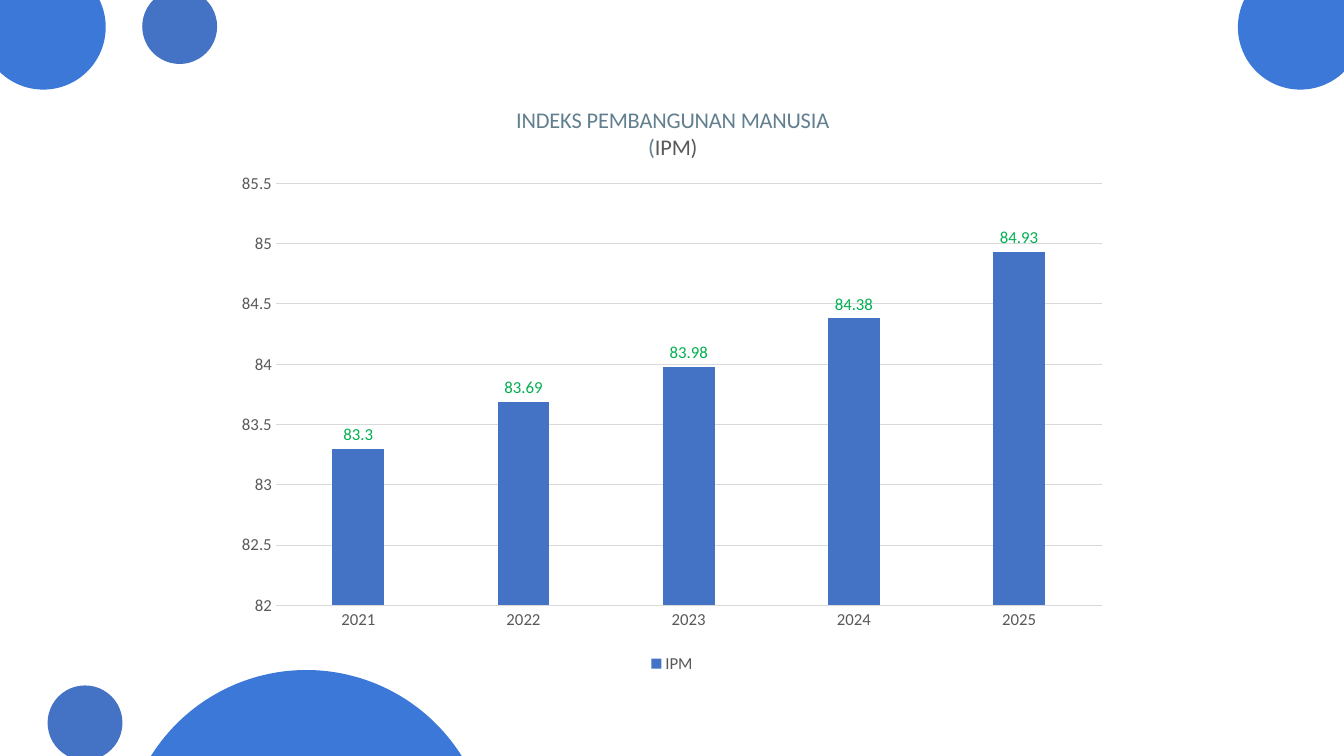
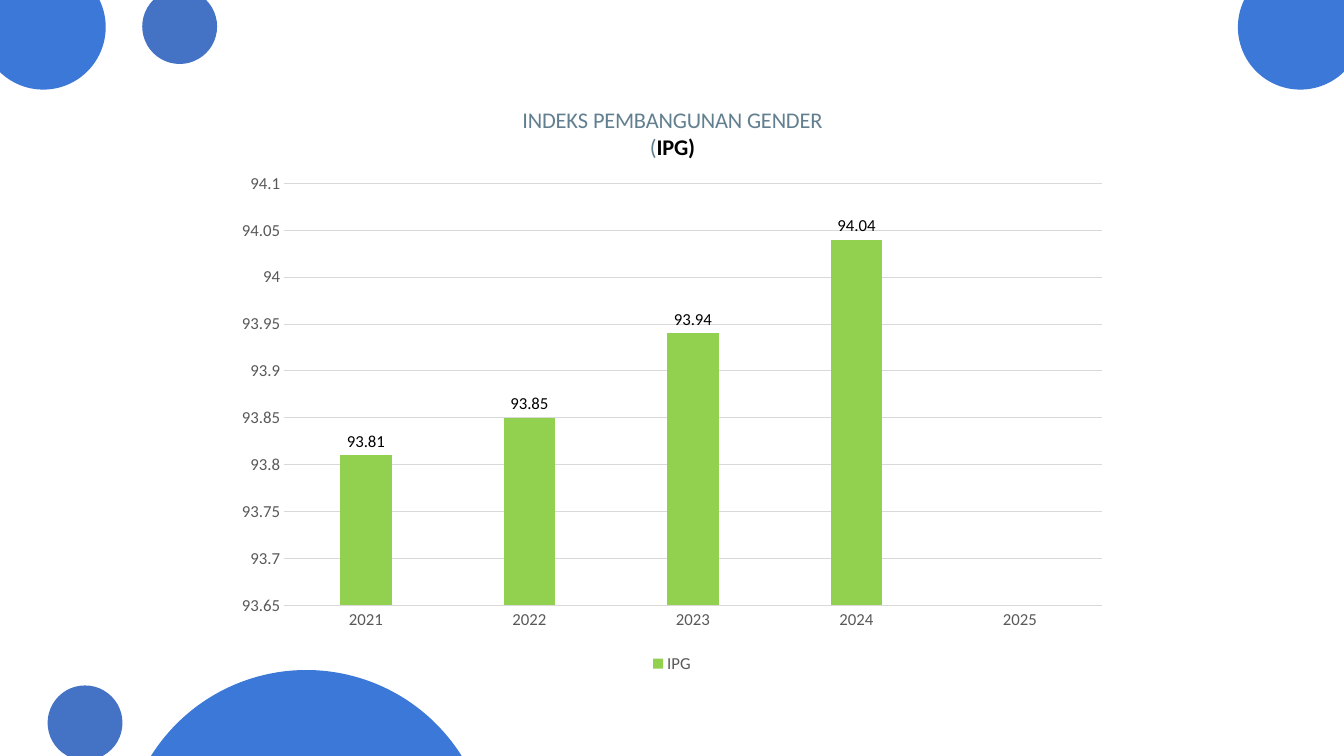
"""Build two slides that chart a development index inside a shared frame of circles."""
from dataclasses import dataclass

from pptx import Presentation
from pptx.chart.axis import CategoryAxis, ValueAxis
from pptx.chart.chart import Chart
from pptx.chart.data import CategoryChartData
from pptx.dml.color import RGBColor
from pptx.dml.fill import FillFormat
from pptx.enum.chart import XL_CHART_TYPE, XL_LABEL_POSITION, XL_LEGEND_POSITION, XL_TICK_MARK
from pptx.enum.shapes import MSO_SHAPE
from pptx.enum.text import PP_ALIGN
from pptx.oxml import parse_xml
from pptx.oxml.ns import nsdecls, qn
from pptx.slide import Slide, SlideLayout
from pptx.text.text import Font
from pptx.util import Pt

OVAL = MSO_SHAPE.OVAL
CENTER = PP_ALIGN.CENTER
COLUMNS = XL_CHART_TYPE.COLUMN_CLUSTERED
OUTSIDE_END = XL_LABEL_POSITION.OUTSIDE_END
BOTTOM = XL_LEGEND_POSITION.BOTTOM
NO_TICK = XL_TICK_MARK.NONE

FONT = "Calibri"
BRIGHT_BLUE, BLUE, GREEN = "3C78D8", "4472C4", "92D050"
TITLE_COLOR, GRAY, GRID, BLACK, LABEL_GREEN = "617F8F", "595959", "D9D9D9", "000000", "00B050"
YEARS = ("2021", "2022", "2023", "2024", "2025")
BLANK_LAYOUT = 6
CHART_LEFT, CHART_TOP, CHART_WIDTH, CHART_HEIGHT = 160, 57, 640, 427
PLOT_TOP, PLOT_BOTTOM, PLOT_RIGHT = 131, 432.5, 787
TITLE_TOP = 73


@dataclass(frozen=True)
class Circle:
    """A decorative circle, measured in points."""
    left: float
    top: float
    diameter: float
    color: str


@dataclass(frozen=True)
class IndexChart:
    """The content and colours of one index chart."""
    title: str
    name: str
    values: tuple[float | None, ...]
    low: float
    high: float
    step: float
    bar_color: str
    label_color: str
    name_color: str
    name_bold: bool
    title_left: float
    plot_left: float


CIRCLES = (
    Circle(-13.7, -25.2, 89.2, BRIGHT_BLUE),
    Circle(87.8, 478.6, 262, BRIGHT_BLUE),
    Circle(34, 489.6, 53.5, BLUE),
    Circle(884.2, -25.2, 89.2, BRIGHT_BLUE),
    Circle(101.6, -7.8, 53.5, BLUE),
)
CHARTS = (
    IndexChart("INDEKS PEMBANGUNAN MANUSIA", "IPM", (83.3, 83.69, 83.98, 84.38, 84.93),
               82, 85.5, 0.5, BLUE, LABEL_GREEN, GRAY, False, 366.5, 197),
    IndexChart("INDEKS PEMBANGUNAN GENDER", "IPG", (93.81, 93.85, 93.94, 94.04, None),
               93.65, 94.1, 0.05, GREEN, BLACK, BLACK, True, 371, 203),
)


def paint(fill: FillFormat, color: str) -> None:
    """Fill with one solid colour."""
    fill.solid()
    fill.fore_color.rgb = RGBColor.from_string(color)


def style_font(font: Font, *, size: float = 12, color: str = GRAY, bold: bool = False) -> None:
    """Set the typeface, size, colour and weight of a font."""
    font.name, font.size, font.bold = FONT, Pt(size), bold
    paint(font.fill, color)


def add_span(para, text: str, **style) -> None:
    """Add a formatted run to a paragraph."""
    span = para.add_run()
    span.text = text
    style_font(span.font, **style)


def add_circles(slide: Slide, layout: SlideLayout) -> None:
    """Draw the circles and hand them to the layout that the slides share."""
    for circle in CIRCLES:
        shape = slide.shapes.add_shape(OVAL, Pt(circle.left), Pt(circle.top),
                                       Pt(circle.diameter), Pt(circle.diameter))
        shape.shadow.inherit = False
        paint(shape.fill, circle.color)
        shape.line.fill.background()
        layout.shapes.element.append(shape.element)


def place(part, index: int, left: float, top: float, *, right: float | None = None,
          bottom: float | None = None) -> None:
    """Fix a chart part at slide positions given in points."""
    for old in part.findall(qn("c:layout")):
        part.remove(old)
    settings = {"xMode": "edge", "yMode": "edge",
                "x": (left - CHART_LEFT) / CHART_WIDTH, "y": (top - CHART_TOP) / CHART_HEIGHT}
    if right is not None and bottom is not None:
        settings = {"layoutTarget": "inner", **settings,
                    "w": (right - left) / CHART_WIDTH, "h": (bottom - top) / CHART_HEIGHT}
    body = "".join(f'<c:{key} val="{value}"/>' for key, value in settings.items())
    part.insert(index, parse_xml(
        f'<c:layout {nsdecls("c")}><c:manualLayout>{body}</c:manualLayout></c:layout>'))


def add_title(chart: Chart, content: IndexChart) -> None:
    """Write the two-line chart title."""
    chart.has_title = True
    frame = chart.chart_title.text_frame
    first, second = frame.paragraphs[0], frame.add_paragraph()
    first.alignment = second.alignment = CENTER
    add_span(first, content.title, size=16, color=TITLE_COLOR)
    add_span(second, "(", size=16, color=TITLE_COLOR)
    add_span(second, f"{content.name})", size=16, color=content.name_color,
             bold=content.name_bold)
    chart.chart_title.include_in_layout = False
    place(chart.chart_title.element, 1, content.title_left, TITLE_TOP)


def style_axes(categories: CategoryAxis, values: ValueAxis, content: IndexChart) -> None:
    """Format both axes and scale the value axis."""
    for axis in (categories, values):
        axis.major_tick_mark = axis.minor_tick_mark = NO_TICK
        style_font(axis.tick_labels.font)
    values.minimum_scale, values.maximum_scale = content.low, content.high
    values.major_unit = content.step
    values.has_major_gridlines = True
    values.format.line.fill.background()
    for line in (categories.format.line, values.major_gridlines.format.line):
        paint(line.fill, GRID)
        line.width = Pt(0.75)


def add_index_chart(slide: Slide, content: IndexChart) -> None:
    """Add one column chart with its title, labels and legend."""
    data = CategoryChartData()
    data.categories = YEARS
    data.add_series(content.name, content.values)
    chart = slide.shapes.add_chart(COLUMNS, Pt(CHART_LEFT), Pt(CHART_TOP), Pt(CHART_WIDTH),
                                   Pt(CHART_HEIGHT), data).chart
    style_font(chart.font, size=10, color=BLACK)
    add_title(chart, content)
    style_axes(chart.category_axis, chart.value_axis, content)
    chart.has_legend = True
    chart.legend.position = BOTTOM
    chart.legend.include_in_layout = False
    style_font(chart.legend.font)

    plot = chart.plots[0]
    plot.gap_width, plot.overlap, plot.vary_by_categories = 219, -27, False
    series = plot.series[0]
    paint(series.format.fill, content.bar_color)
    labels = series.data_labels
    labels.show_value = True
    labels.position = OUTSIDE_END
    style_font(labels.font, color=content.label_color)
    plot_area = chart.element.find(f'{qn("c:chart")}/{qn("c:plotArea")}')
    place(plot_area, 0, content.plot_left, PLOT_TOP, right=PLOT_RIGHT, bottom=PLOT_BOTTOM)


def main() -> None:
    """Build and save the deck."""
    deck = Presentation()
    deck.slide_width, deck.slide_height = Pt(960), Pt(540)
    layout = deck.slide_layouts[BLANK_LAYOUT]
    pages = [deck.slides.add_slide(layout) for _ in CHARTS]
    add_circles(pages[0], layout)
    for page, content in zip(pages, CHARTS):
        add_index_chart(page, content)
    deck.save("out.pptx")


if __name__ == "__main__":
    main()
